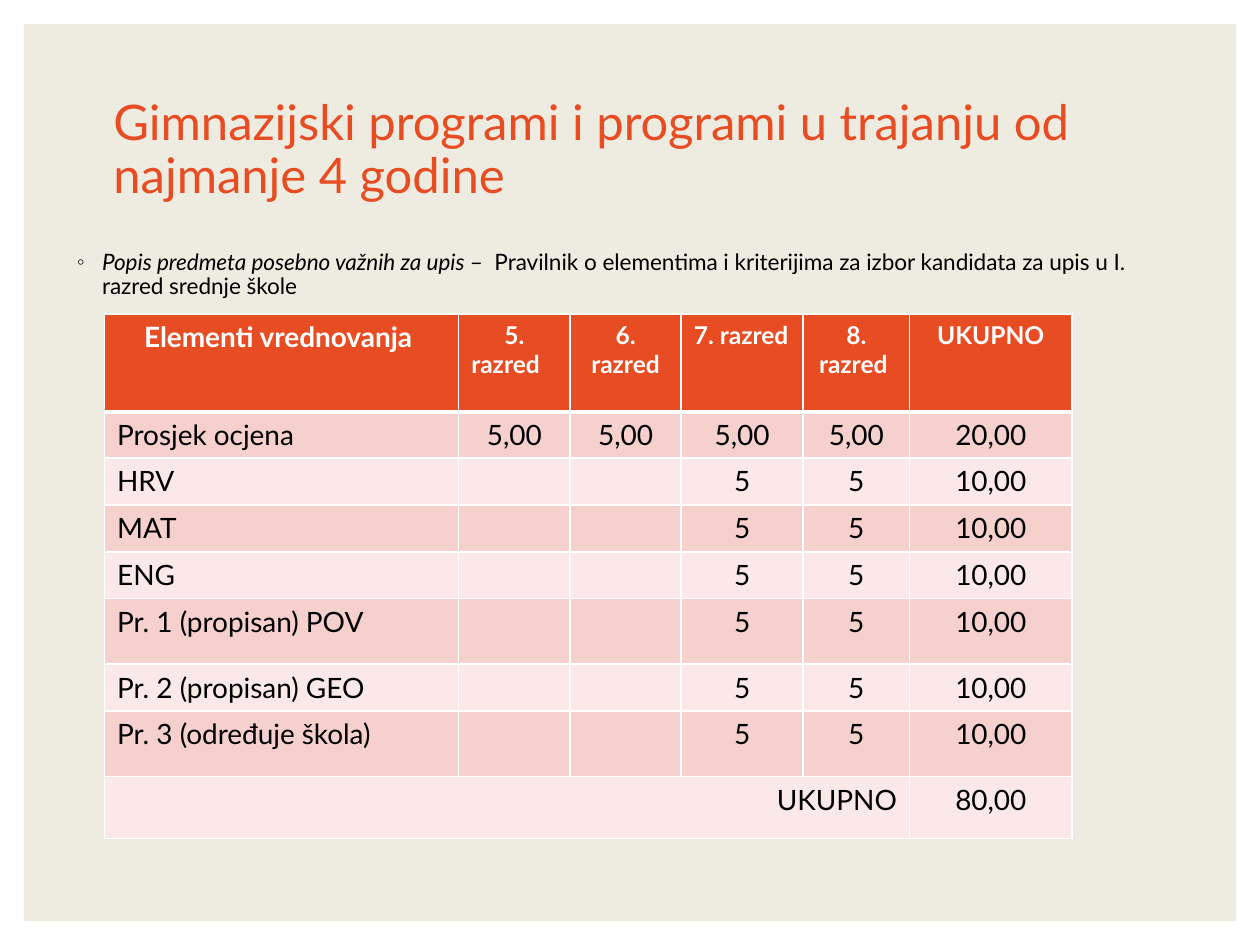
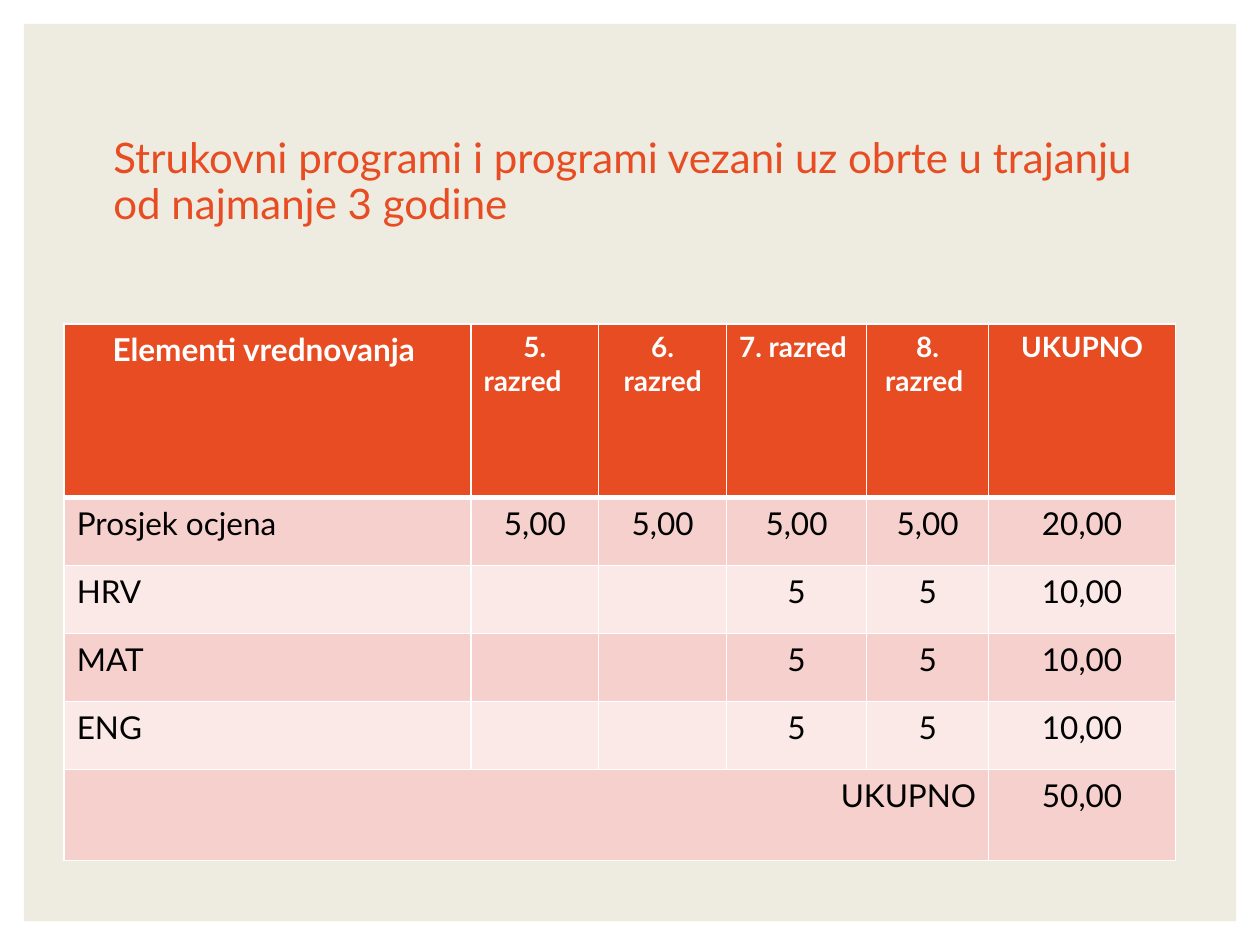
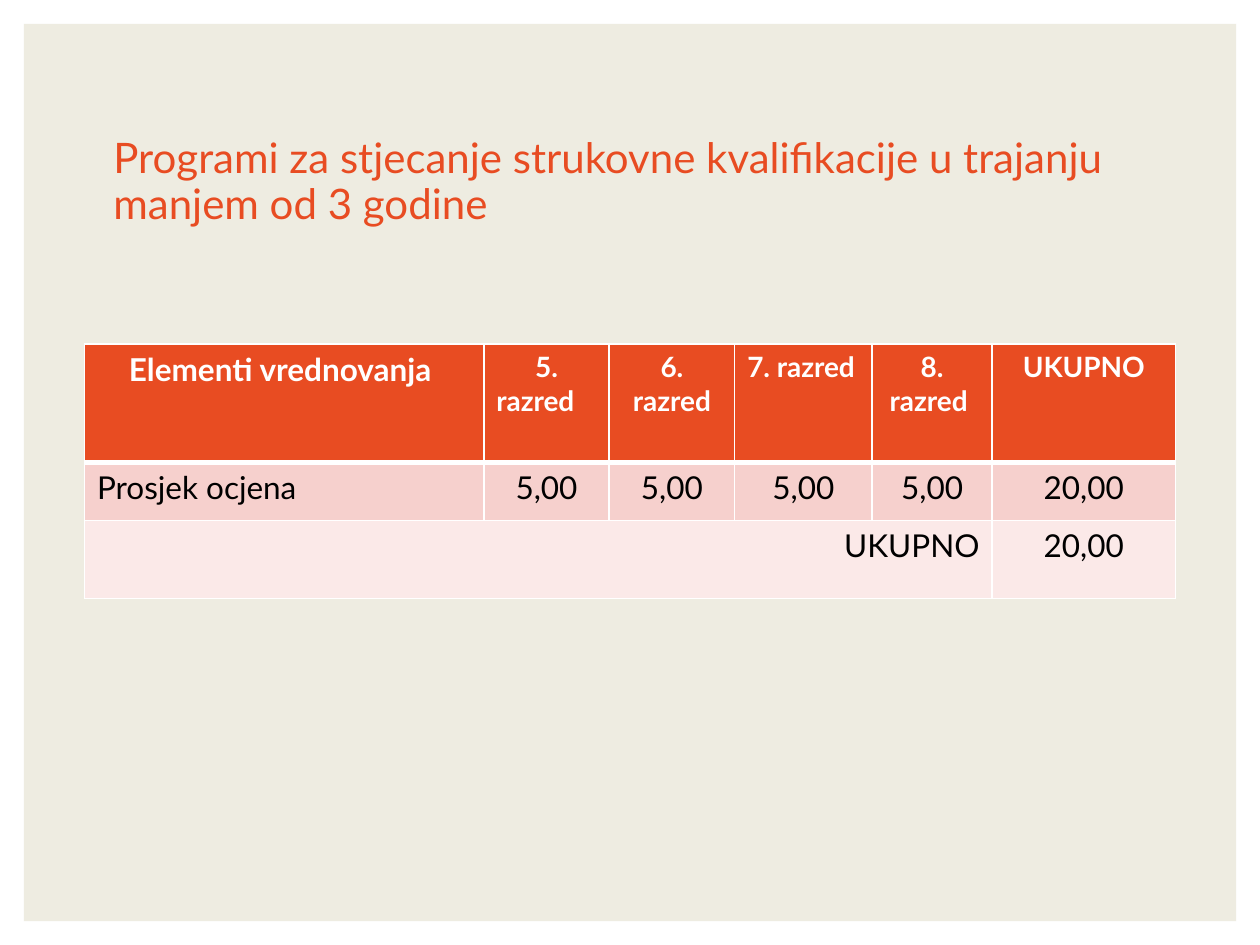
import dataclasses

import pptx
import pptx.dml.color
import pptx.enum.shapes
import pptx.enum.text
import pptx.oxml.ns
import pptx.util
from lxml import etree

ALIGN = pptx.enum.text.PP_ALIGN
qn = pptx.oxml.ns.qn


@dataclasses.dataclass(frozen=True)
class Theme:
    font: str = "Lato"
    accent: str = "E84C22"
    paper: str = "EEECE1"
    white: str = "FFFFFF"
    ink: str = "000000"
    bullet: str = "262626"
    bands: tuple = ("F6D0CD", "FBE9E8")
    big: float = 28
    mid: float = 24
    note: float = 12.9
    cell: float = 18
    small: float = 16
    step: float = 2      # header labels are this much smaller than cells
    line: float = 1
    rule: float = 3
    lead: float = 0.9


def rgb(code):
    return pptx.dml.color.RGBColor.from_string(code)


def put(para, text, font=Theme.font, size=Theme.cell, color=Theme.ink,
        bold=False, italic=False, align=ALIGN.LEFT, lead=None):
    """Add a run to a paragraph; empty text only sets the line's size."""
    para.alignment = align
    if lead:
        para.line_spacing = lead
    if not text:
        etree.SubElement(para._p, qn("a:endParaRPr"), sz=str(int(size * 100)))
        return
    run = para.add_run()
    run.text = text
    run.font.name = font
    run.font.size = pptx.util.Pt(size)
    run.font.color.rgb = rgb(color)
    run.font.bold = bold
    run.font.italic = italic


def edge(cell, side, width, color):
    """Draw one border of a cell; call before the fill is set."""
    line = etree.SubElement(cell._tc.get_or_add_tcPr(), qn("a:ln" + side),
                            w=str(pptx.util.Pt(width)))
    fill = etree.SubElement(line, qn("a:solidFill"))
    etree.SubElement(fill, qn("a:srgbClr"), val=color)


def mark(value):
    return f"{value:.2f}".replace(".", ",")


class Deck:
    """Slides on a grid of 100 columns by 75 rows."""
    COLS, ROWS = 100, 75
    PLAIN, LIST = 5, 1
    SHARES = (0.366, 0.115, 0.115, 0.126, 0.11, 0.168)
    HEADS = ("Elementi vrednovanja ", "5. razred\t", "6. razred",
             "7. razred\t", "8. razred ", "UKUPNO")

    def __init__(self, theme):
        self.theme = theme
        self.prs = pptx.Presentation()
        self.prs.slide_width = pptx.util.Inches(10)
        self.prs.slide_height = pptx.util.Inches(7.5)
        self.slide = None

    def wide(self, cols):
        return round(self.prs.slide_width * cols / self.COLS)

    def high(self, rows):
        return round(self.prs.slide_height * rows / self.ROWS)

    def box(self, x, y, w, h):
        return self.wide(x), self.high(y), self.wide(w), self.high(h)

    def place(self, shape, area):
        shape.left, shape.top, shape.width, shape.height = self.box(*area)
        frame = shape.text_frame
        frame.word_wrap = True
        frame.auto_size = pptx.enum.text.MSO_AUTO_SIZE.NONE
        return frame

    def page(self, title, size, depth, layout=PLAIN):
        self.slide = self.prs.slides.add_slide(self.prs.slide_layouts[layout])
        self.panel()
        frame = self.place(self.slide.shapes.title, (8, 7, 84, depth))
        frame.vertical_anchor = pptx.enum.text.MSO_ANCHOR.MIDDLE
        put(frame.paragraphs[0], title, size=size, color=self.theme.accent,
            lead=self.theme.lead)

    def panel(self):
        gap = 1.9
        shape = self.slide.shapes.add_shape(
            pptx.enum.shapes.MSO_SHAPE.RECTANGLE,
            *self.box(gap, gap, self.COLS - 2 * gap, self.ROWS - 2 * gap))
        shape.shadow.inherit = False
        shape.fill.solid()
        shape.fill.fore_color.rgb = rgb(self.theme.paper)
        shape.line.fill.background()
        tree = shape.element.getparent()
        tree.insert(2, shape.element)  # behind the placeholders

    def bullet(self, area, lead, rest):
        frame = self.place(self.slide.placeholders[1], area)
        para = frame.paragraphs[0]
        props = para._p.get_or_add_pPr()
        dent = pptx.util.Inches(0.2)
        props.set("marL", str(dent))
        props.set("indent", str(-dent))
        tint = etree.SubElement(props, qn("a:buClr"))
        etree.SubElement(tint, qn("a:srgbClr"), val=self.theme.bullet)
        etree.SubElement(props, qn("a:buChar"), char="◦")
        para.space_before = pptx.util.Pt(0)
        style = dict(size=self.theme.note, lead=self.theme.lead)
        put(para, lead, italic=True, **style)
        put(para, rest, **style)

    def cell(self, grid, row, col, text, fill, **style):
        cell = grid.cell(row, col)
        theme = self.theme
        thick = {"B": 0, "T": 1}  # row whose side meets the header rule
        for side in "LRTB":
            width = theme.rule if thick.get(side) == row else theme.line
            edge(cell, side, width, theme.white)
        cell.fill.solid()
        cell.fill.fore_color.rgb = rgb(fill)
        put(cell.text_frame.paragraphs[0], text, **style)

    def scores(self, x, y, w, size, head, row, foot, names=(), tall=None):
        """Points table: average marks, one row per subject, and the sum."""
        theme = self.theme
        body = [("Prosjek ocjena", *[mark(5)] * 4, mark(20))]
        body += [(name, "", "", "5", "5", mark(10)) for name in names]
        total = mark(20 + 10 * len(names))
        body.append(("UKUPNO", "", "", "", "", total))
        last = len(body)
        sizes = [head] + [row] * (last - 1) + [foot]
        for at, size_at in (tall or {}).items():
            sizes[at] = size_at
        grid = self.slide.shapes.add_table(
            last + 1, len(self.HEADS), *self.box(x, y, w, sum(sizes))).table
        grid.horz_banding = False
        for col, share in zip(grid.columns, self.SHARES):
            col.width = self.wide(w * share)
        for line, depth in zip(grid.rows, sizes):
            line.height = self.high(depth)

        for c, text in enumerate(self.HEADS):
            self.cell(grid, 0, c, text, theme.accent, color=theme.white,
                      size=size - theme.step if c else size,
                      bold=True, align=ALIGN.CENTER)
        for r, texts in enumerate(body, 1):
            for c, text in enumerate(texts):
                first = ALIGN.RIGHT if r == last else ALIGN.LEFT
                self.cell(grid, r, c, text, theme.bands[(r - 1) % 2],
                          size=size, align=ALIGN.CENTER if c else first)
        grid.cell(last, 0).merge(grid.cell(last, 4))


def main():
    theme = Theme()
    deck = Deck(theme)
    core = ("HRV", "MAT", "ENG")
    extra = ("Pr. 1 (propisan) POV", "Pr. 2 (propisan) GEO",
             "Pr. 3 (određuje škola)")

    deck.page("Gimnazijski programi i programi u trajanju od najmanje 4 godine",
              theme.big, 10, deck.LIST)
    deck.bullet((5.1, 19.4, 90, 5), "Popis predmeta posebno važnih za upis ",
                "–  Pravilnik o elementima i kriterijima za izbor kandidata "
                "za upis u I. razred srednje škole")
    deck.scores(8.3, 24.9, 76.8, theme.small, head=7.8, row=3.66, foot=4.9,
                names=core + extra, tall={5: 5.2, 7: 5.2})

    deck.page("Strukovni programi i programi vezani uz obrte u trajanju "
              "od najmanje 3 godine", theme.mid, 15)
    deck.scores(5.1, 25.7, 88.2, theme.cell, head=13.8, row=5.4, foot=7.2,
                names=core)

    deck.page("Programi za stjecanje strukovne kvalifikacije u trajanju "
              "manjem od 3 godine", theme.mid, 15)
    deck.scores(6.7, 27.3, 86.6, theme.cell, head=9.4, row=4.6, foot=6.2)

    deck.prs.save("out.pptx")


if __name__ == "__main__":
    main()
